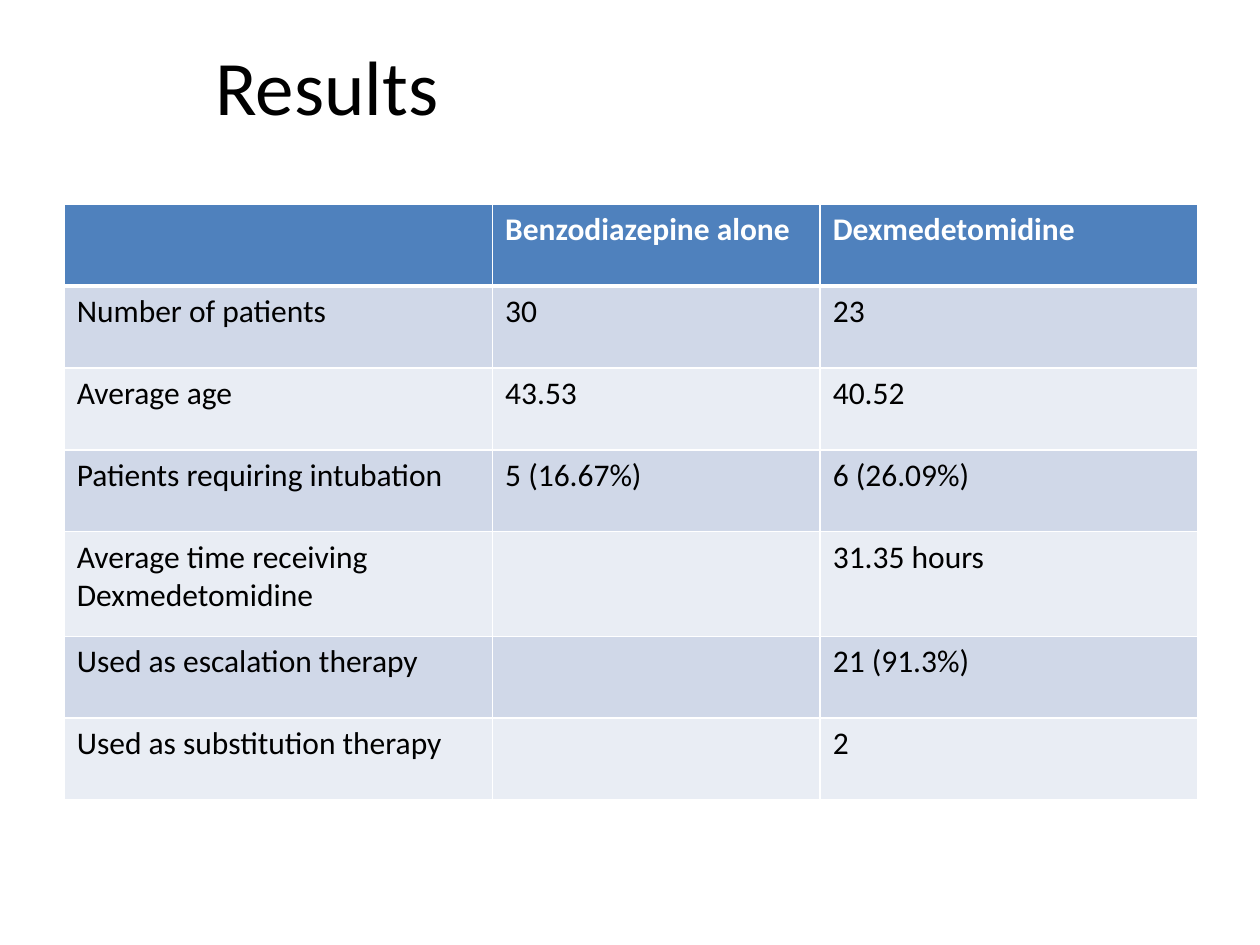
from dataclasses import dataclass

from lxml.etree import SubElement
from pptx import Presentation
from pptx.dml.color import RGBColor as RGB
from pptx.enum.text import MSO_ANCHOR as Anchor, PP_ALIGN as Align
from pptx.oxml.ns import qn
from pptx.util import Inches, Pt

TITLE = "Results"
ROWS = [
    ("", "Benzodiazepine alone", "Dexmedetomidine"),
    ("Number of patients", "30", "23"),
    ("Average age", "43.53", "40.52"),
    ("Patients requiring intubation", "5 (16.67%)", "6 (26.09%)"),
    ("Average time receiving Dexmedetomidine", "", "31.35 hours"),
    ("Used as escalation therapy", "", "21 (91.3%)"),
    ("Used as substitution therapy", "", "2"),
]
COLS = (3.4, 2.6, 3)
ROW, TALL = 0.65, 0.83
TALL_ROW = 4


@dataclass(frozen=True)
class Theme:
    font: str = "Calibri"
    head: str = "4F81BD"
    bands: tuple = ("E9EDF4", "D0D8E8")
    ink: str = "000000"
    paper: str = "FFFFFF"
    title: int = 44
    body: int = 18
    thin: int = 1
    thick: int = 3


LOOK = Theme()


def write(frame, text, size=LOOK.body, color=LOOK.ink, bold=False):
    frame.text = text
    para = frame.paragraphs[0]
    para.alignment = Align.LEFT
    font = para.font
    font.name, font.size, font.bold = LOOK.font, Pt(size), bold
    font.color.rgb = RGB.from_string(color)


def edge(cell, top, bottom):
    """Draw the four cell borders, with the given top and bottom weights."""
    props = cell._tc.get_or_add_tcPr()
    for side, weight in zip("LRTB", (LOOK.thin, LOOK.thin, top, bottom)):
        line = SubElement(props, qn(f"a:ln{side}"), w=str(Pt(weight)))
        fill = SubElement(line, qn("a:solidFill"))
        SubElement(fill, qn("a:srgbClr"), val=LOOK.paper)


def add_title(slide):
    title = slide.shapes.title
    title.left, title.top = Inches(1.61), Inches(0.03)
    title.width, title.height = Inches(7.89), Inches(1.28)
    title.text_frame.vertical_anchor = Anchor.MIDDLE
    write(title.text_frame, TITLE, size=LOOK.title)


def add_results(slide):
    highs = [TALL if r == TALL_ROW else ROW for r in range(len(ROWS))]
    table = slide.shapes.add_table(
        len(ROWS), len(COLS), Inches(0.51), Inches(1.62),
        Inches(sum(COLS)), Inches(sum(highs))).table
    for col, wide in zip(table.columns, COLS):
        col.width = Inches(wide)
    for r, (row, high) in enumerate(zip(ROWS, highs)):
        table.rows[r].height = Inches(high)
        head = r == 0
        back = LOOK.head if head else LOOK.bands[r % 2]
        for c, text in enumerate(row):
            cell = table.cell(r, c)
            edge(cell, top=LOOK.thick if r == 1 else LOOK.thin,
                 bottom=LOOK.thick if head else LOOK.thin)
            cell.fill.solid()
            cell.fill.fore_color.rgb = RGB.from_string(back)
            write(cell.text_frame, text, bold=head,
                  color=LOOK.paper if head else LOOK.ink)


def main():
    deck = Presentation()
    deck.slide_width, deck.slide_height = Inches(10), Inches(7.5)
    slide = deck.slides.add_slide(deck.slide_layouts[5])
    add_title(slide)
    add_results(slide)
    deck.save("out.pptx")


if __name__ == "__main__":
    main()
